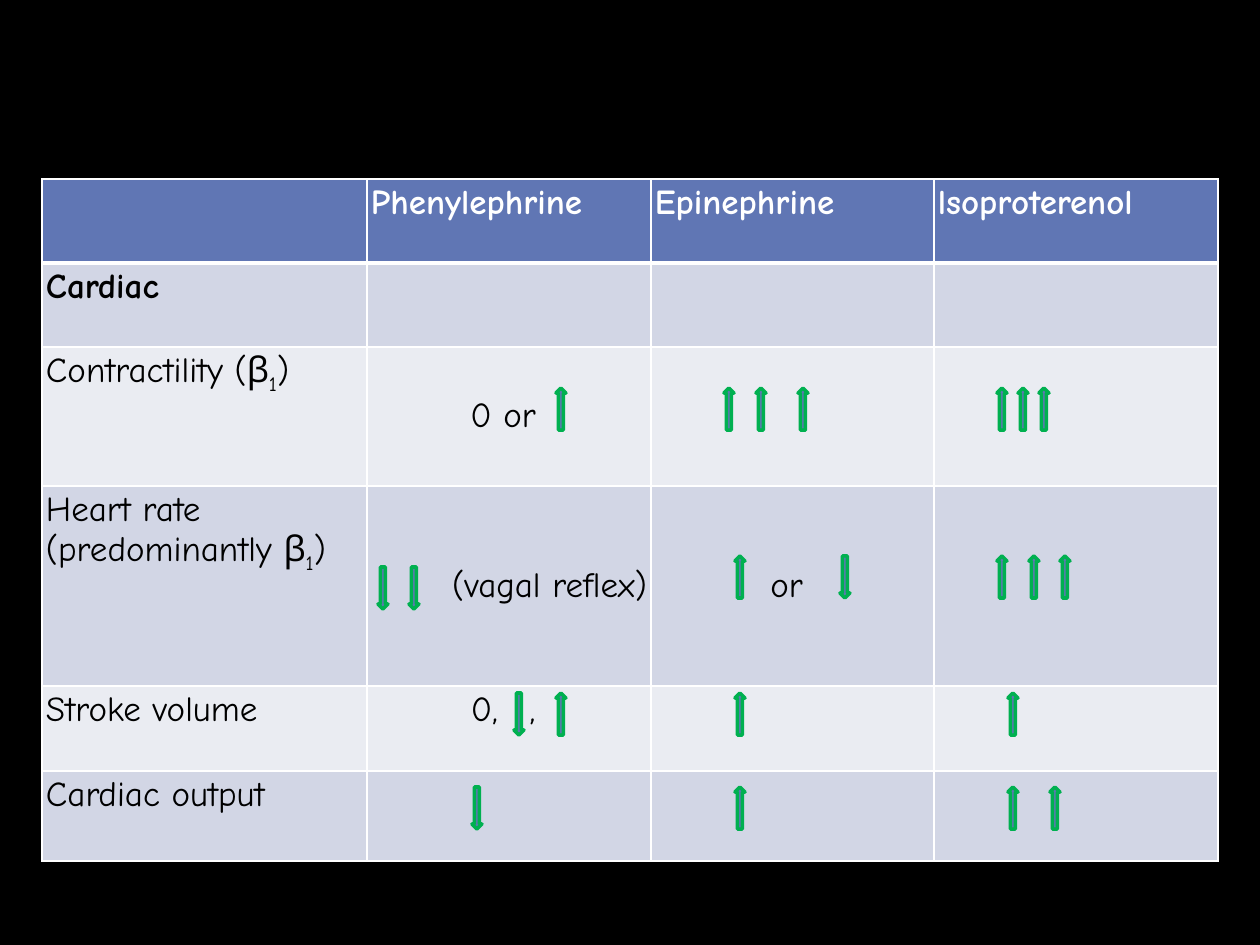
from pptx import Presentation
from pptx.dml.color import RGBColor
from pptx.enum.shapes import MSO_SHAPE as Shape
from pptx.enum.text import MSO_ANCHOR as Anchor, PP_ALIGN as Align
from pptx.oxml import parse_xml
from pptx.oxml.ns import nsdecls
from pptx.util import Pt

PX = 914400 / 126  # EMU per px


def emu(*px):
    return [round(n * PX) for n in px]


def paint(fill, color):
    fill.solid()
    fill.fore_color.rgb = RGBColor.from_string(color)


BLUE, GREEN, WHITE, BLACK = "6076B4", "00B050", "FFFFFF", "000000"
BANDS = ["D2D6E5", "EAECF2"]
DRUGS = ["Phenylephrine", "Epinephrine", "lsoproterenol"]
ROWS = [
    ["", *DRUGS],
    ["Cardiac", "", "", ""],
    ["Contractility (β1)", "0 or ", "", ""],
    ["Heart rate (predominantly β1)", "(vagal reflex)", "or ", ""],
    ["Stroke volume", "0, , ", "", ""],
    ["Cardiac output", "", "", ""],
]
WIDTHS = [325, 284, 283, 284]
HEIGHTS = [84, 84, 139, 200, 85, 90]

prs = Presentation()
prs.slide_width, prs.slide_height = emu(1260, 945)
slide = prs.slides.add_slide(prs.slide_layouts[6])
paint(slide.background.fill, BLACK)

# Table of drug effects
box = emu(42, 179, sum(WIDTHS), sum(HEIGHTS))
table = slide.shapes.add_table(len(ROWS), len(WIDTHS), *box).table
for col, width in zip(table.columns, emu(*WIDTHS)):
    col.width = width
for row, height in zip(table.rows, emu(*HEIGHTS)):
    row.height = height

for r, texts in enumerate(ROWS):
    for c, text in enumerate(texts):
        cell = table.cell(r, c)
        props = cell._tc.get_or_add_tcPr()
        for side in "LRTB":
            thick = (r == 0 and side == "B") or (r == 1 and side == "T")
            props.append(parse_xml(
                f'<a:ln{side} {nsdecls("a")} w="{Pt(3 if thick else 1)}"><a:solidFill>'
                f'<a:srgbClr val="{WHITE}"/></a:solidFill></a:ln{side}>'))
        paint(cell.fill, BLUE if r == 0 else BANDS[(r - 1) % 2])
        cell.margin_left = cell.margin_right = cell.margin_top = cell.margin_bottom = emu(4)[0]

        para = cell.text_frame.paragraphs[0]
        font = para.font
        font.name, font.size, font.bold = "Comic Neue", Pt(20), r < 2
        paint(font.fill, WHITE if r == 0 else BLACK)
        if r > 1 and c > 0:
            para.alignment = Align.RIGHT if text == "(vagal reflex)" else Align.CENTER
            cell.vertical_anchor = Anchor.MIDDLE if r < 4 else Anchor.TOP

        # A subscript after beta, and a wide space where an arrow stands
        if "β1" in text:
            parts = [text[:-2], "1", ")"]
        elif text == "0, , ":
            parts = ["0,", " ", ", "]
        else:
            parts = [text] if text else []
        for part in parts:
            run = para.add_run()
            run.text = part
            if part == "1":
                run.font._element.set("baseline", "-25000")
            elif part == " ":
                run.font._element.set("spc", "1150")

# Arrows: top, direction, left edges
UP, DOWN = Shape.UP_ARROW, Shape.DOWN_ARROW
ARROWS = [
    (388, UP, [556, 724, 756, 798, 997, 1018, 1039]),
    (556, UP, [735, 997, 1029, 1060]),
    (556, DOWN, [840]),
    (567, DOWN, [378, 409]),
    (693, UP, [556, 735, 1008]),
    (693, DOWN, [514]),
    (787, UP, [735, 1008, 1050]),
    (787, DOWN, [472]),
]
for top, kind, lefts in ARROWS:
    for left in lefts:
        arrow = slide.shapes.add_shape(kind, *emu(left, top, 10, 42))
        arrow.shadow.inherit = False
        paint(arrow.fill, BLUE)
        paint(arrow.line.fill, GREEN)
        arrow.line.width = Pt(2)

prs.save("out.pptx")
